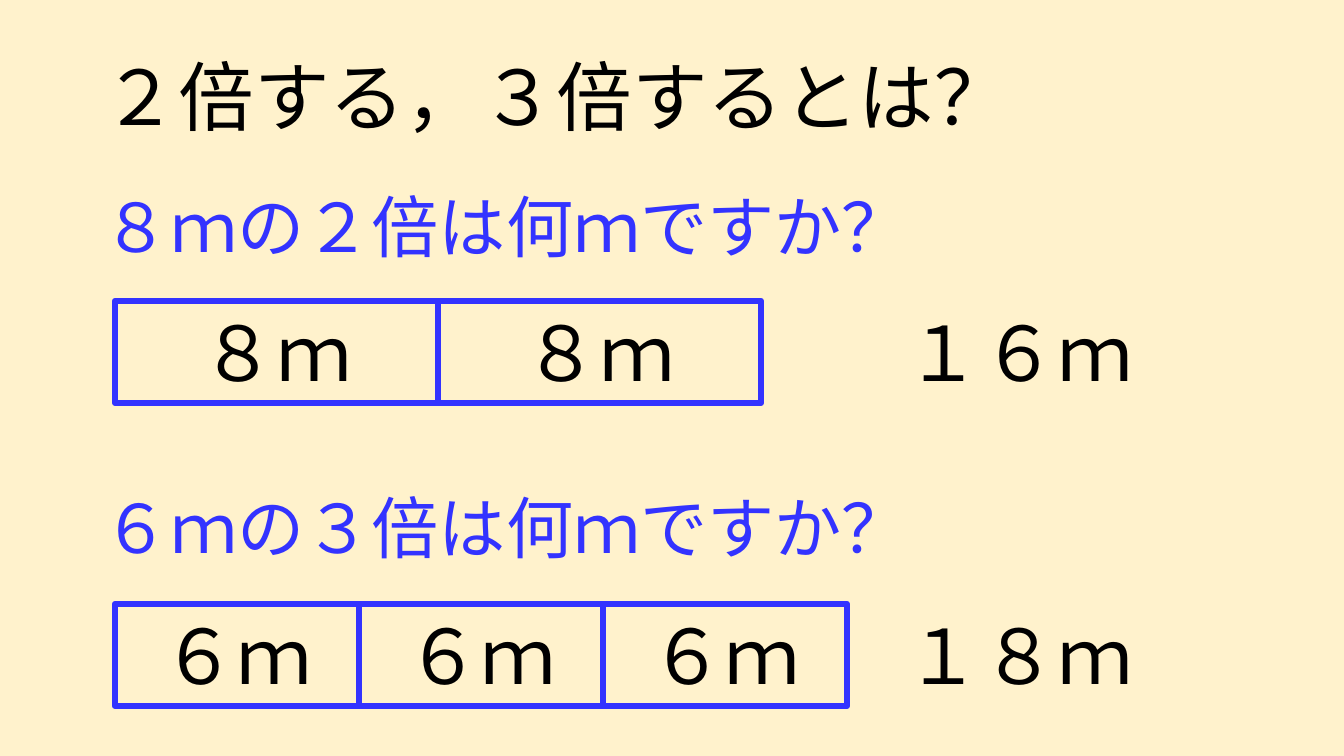
from lxml import etree
from pptx import Presentation
from pptx.dml.color import RGBColor
from pptx.enum.shapes import MSO_SHAPE
from pptx.enum.text import MSO_ANCHOR, MSO_AUTO_SIZE, PP_ALIGN
from pptx.oxml.ns import qn
from pptx.util import Emu, Pt

# Content
HEADING = "２倍する，３倍するとは？"
PROBLEMS = [
    {"question": "８ｍの２倍は何ｍですか？", "part": "８ｍ", "times": 2,
     "answer": "１６ｍ", "question_top": 176, "question_height": 109,
     "bar_top": 301, "part_width": 323},
    {"question": "６ｍの３倍は何ｍですか？", "part": "６ｍ", "times": 3,
     "answer": "１８ｍ", "question_top": 476, "question_height": 112,
     "bar_top": 604, "part_width": 244},
]

# Style and layout, lengths in px
COLORS = {"background": "FFF2CC", "blue": "3333FF", "black": "000000"}
FONT = "Noto Sans CJK JP"
EMU_PER_PX = 914400 / 100.8
TEXT_LEFT, BAR_LEFT, ANSWER_LEFT = 93, 115, 896
ROW_HEIGHT = 102


def px(length):
    return Emu(round(length * EMU_PER_PX))


def color(name):
    return RGBColor.from_string(COLORS[name])


def write(box, text, size=54, ink="black", align=PP_ALIGN.LEFT,
          anchor=MSO_ANCHOR.TOP, grow=True, line_spacing=None):
    frame = box.text_frame
    frame.word_wrap = True
    frame.vertical_anchor = anchor
    frame.auto_size = MSO_AUTO_SIZE.SHAPE_TO_FIT_TEXT if grow else MSO_AUTO_SIZE.NONE
    para = frame.paragraphs[0]
    para.alignment = align
    para.line_spacing = line_spacing
    span = para.add_run()
    span.text = text
    span.font.size = Pt(size)
    span.font.name = FONT
    span.font.color.rgb = color(ink)
    # East Asian typeface
    etree.SubElement(span.font._element, qn("a:ea"), typeface=FONT)


def add_text(page, left, top, width, height, text, **style):
    box = page.shapes.add_textbox(px(left), px(top), px(width), px(height))
    write(box, text, **style)


def add_part(page, left, top, width, text):
    box = page.shapes.add_shape(MSO_SHAPE.RECTANGLE, px(left), px(top),
                                px(width), px(ROW_HEIGHT))
    box.shadow.inherit = False
    box.fill.background()
    box.line.color.rgb = color("blue")
    box.line.width = Pt(4.5)
    write(box, text, align=PP_ALIGN.CENTER)


def main():
    deck = Presentation()
    deck.slide_width, deck.slide_height = px(1344), px(756)
    page = deck.slides.add_slide(deck.slide_layouts[6])
    page.background.fill.solid()
    page.background.fill.fore_color.rgb = color("background")

    # Heading
    add_text(page, TEXT_LEFT, 45, 978, ROW_HEIGHT, HEADING)

    # Each problem: question, bar of equal parts, answer
    for problem in PROBLEMS:
        top, width = problem["bar_top"], problem["part_width"]
        add_text(page, TEXT_LEFT, problem["question_top"], 869,
                 problem["question_height"], problem["question"], size=48,
                 ink="blue", anchor=MSO_ANCHOR.MIDDLE, grow=False,
                 line_spacing=0.9)
        for index in range(problem["times"]):
            add_part(page, BAR_LEFT + index * width, top, width, problem["part"])
        add_text(page, ANSWER_LEFT, top, 265, ROW_HEIGHT, problem["answer"])

    deck.save("out.pptx")


if __name__ == "__main__":
    main()
